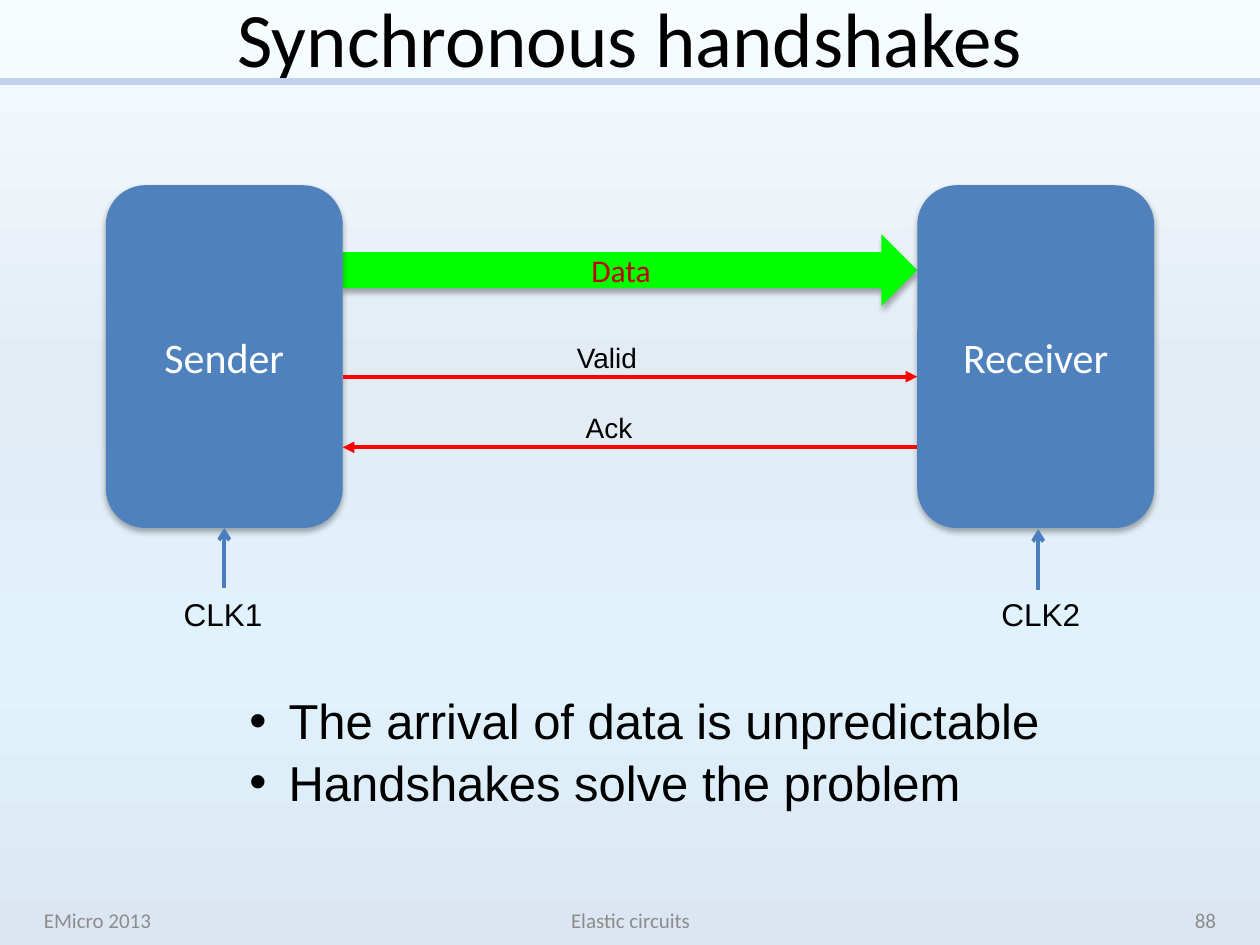
from lxml.etree import SubElement
from pptx import Presentation
from pptx.dml.color import RGBColor
from pptx.enum.shapes import MSO_CONNECTOR, MSO_SHAPE
from pptx.enum.text import MSO_ANCHOR, MSO_AUTO_SIZE, PP_ALIGN
from pptx.oxml.ns import qn
from pptx.util import Inches, Pt

LEFT, MID, RIGHT = PP_ALIGN.LEFT, PP_ALIGN.CENTER, PP_ALIGN.RIGHT


def color(code):
    return RGBColor.from_string(code)


def node(parent, tag, **attrs):
    return SubElement(parent, qn(tag), {key: str(val) for key, val in attrs.items()})


class Sheet:
    """Holds the slide and its style, and adds each kind of element."""

    black, gray, blue, red = "000000", "8C8C8C", "4F81BD", "FF0000"
    head, plain = "Calibri", "Arial"

    def __init__(self, slide):
        self.slide = slide
        self.shapes = slide.shapes

    def back(self, stops, angle):
        fill = self.slide.background.fill
        fill.gradient()
        fill.gradient_angle = angle
        parts = self.slide.element.find(".//" + qn("a:gsLst"))
        for part in list(parts):
            parts.remove(part)
        for place, code in stops:
            stop = node(parts, "a:gs", pos=place * 1000)
            node(stop, "a:srgbClr", val=code)

    def style(self, para, size, face, code, align):
        para.alignment = align
        font = para.font
        font.size, font.name = Pt(size), face
        font.color.rgb = color(code)

    def place(self, shape, left, top, width, height):
        shape.left, shape.top = Inches(left), Inches(top)
        shape.width, shape.height = Inches(width), Inches(height)
        shape.text_frame.auto_size = MSO_AUTO_SIZE.NONE

    def title(self, text, *box):
        shape = self.shapes.title
        self.place(shape, *box)
        frame = shape.text_frame
        frame.text = text
        frame.vertical_anchor = MSO_ANCHOR.MIDDLE
        self.style(frame.paragraphs[0], 44, self.head, self.black, MID)

    def list(self, lines, *box):
        shape = self.slide.placeholders[1]
        self.place(shape, *box)
        frame = shape.text_frame
        frame.text = "\n".join(lines)
        frame.word_wrap = False
        indent = Inches(0.31)
        for para in frame.paragraphs:
            para.space_before = Pt(0)
            para.line_spacing = 1.05
            props = para._p.get_or_add_pPr()
            props.set("marL", str(indent))
            props.set("indent", str(-indent))
            node(props, "a:buFont", typeface=self.plain)
            node(props, "a:buChar", char="•")
            self.style(para, 28, self.plain, self.black, LEFT)

    def label(self, text, size, *box):
        frame = self.shapes.add_textbox(*map(Inches, box)).text_frame
        frame.word_wrap = False
        frame.text = text
        self.style(frame.paragraphs[0], size, self.plain, self.black, LEFT)

    def foot(self, text, left, width, align):
        box = self.shapes.add_textbox(*map(Inches, (left, 7.1, width, 0.4)))
        frame = box.text_frame
        frame.word_wrap = True
        frame.vertical_anchor = MSO_ANCHOR.MIDDLE
        frame.text = text
        self.style(frame.paragraphs[0], 12, self.head, self.gray, align)

    def block(self, kind, text, size, fill, ink, *box):
        shape = self.shapes.add_shape(kind, *map(Inches, box))
        shape.fill.solid()
        shape.fill.fore_color.rgb = color(fill)
        shape.line.fill.background()
        shape.shadow.inherit = False
        effect = shape.element.spPr.find(qn("a:effectLst"))
        shade = node(effect, "a:outerShdw", blurRad=Pt(3.5), dist=Pt(2.2),
                     dir=90 * 60000, rotWithShape=0)
        node(node(shade, "a:srgbClr", val=self.black), "a:alpha", val=32000)
        frame = shape.text_frame
        frame.vertical_anchor = MSO_ANCHOR.MIDDLE
        frame.text = text
        self.style(frame.paragraphs[0], size, self.head, ink, MID)

    def line(self, start, end, code, width=2.25, tip=None):
        wire = self.shapes.add_connector(
            MSO_CONNECTOR.STRAIGHT, *map(Inches, (*start, *end)))
        wire.line.color.rgb = color(code)
        wire.line.width = Pt(width)
        if tip:
            node(wire.line._get_or_add_ln(), "a:tailEnd", type=tip)
        node(wire.element.spPr, "a:effectLst")


def main():
    deck = Presentation()
    deck.slide_width, deck.slide_height = Inches(10), Inches(7.5)
    sheet = Sheet(deck.slides.add_slide(deck.slide_layouts[1]))
    sheet.back([(0, "F7FDFF"), (40, "E3EBF5"), (70, "E0F3FC"), (100, "DCE6F2")], 270)
    sheet.line((0, 0.65), (10, 0.65), "C2D1ED", 4)
    sheet.title("Synchronous handshakes", 0.5, 0, 9, 0.58)

    near, far, wide = 2.72, 7.28, 1.88
    sheet.block(MSO_SHAPE.RIGHT_ARROW, "Data", 18, "00FF00", "C00000",
                near, 1.86, far - near, 0.57)
    for name, left in (("Sender", near - wide), ("Receiver", far)):
        sheet.block(MSO_SHAPE.ROUNDED_RECTANGLE, name, 24, sheet.blue, "FFFFFF",
                    left, 1.47, wide, 2.72)

    for name, left, width, start, end, y in (
            ("Valid", 4.48, 0.68, near, far, 2.99),
            ("Ack", 4.55, 0.58, far, near, 3.55)):
        sheet.line((start, y), (end, y), sheet.red, tip="triangle")
        sheet.label(name, 16, left, y - 0.34, width, 0.37)

    for name, left, x, top in (("CLK1", 1.36, 1.78, 4.19), ("CLK2", 7.85, 8.24, 4.2)):
        sheet.line((x, top + 0.48), (x, top), "4B7EBC", tip="arrow")
        sheet.label(name, 18, left, 4.67, 0.83, 0.4)

    sheet.list(["The arrival of data is unpredictable", "Handshakes solve the problem"],
               1.88, 5.41, 6.56, 1.04)
    sheet.foot("EMicro 2013", 0.25, 2.33, LEFT)
    sheet.foot("Elastic circuits", 3.42, 3.17, MID)
    sheet.foot("88", 7.42, 2.33, RIGHT)
    deck.save("out.pptx")


if __name__ == "__main__":
    main()
